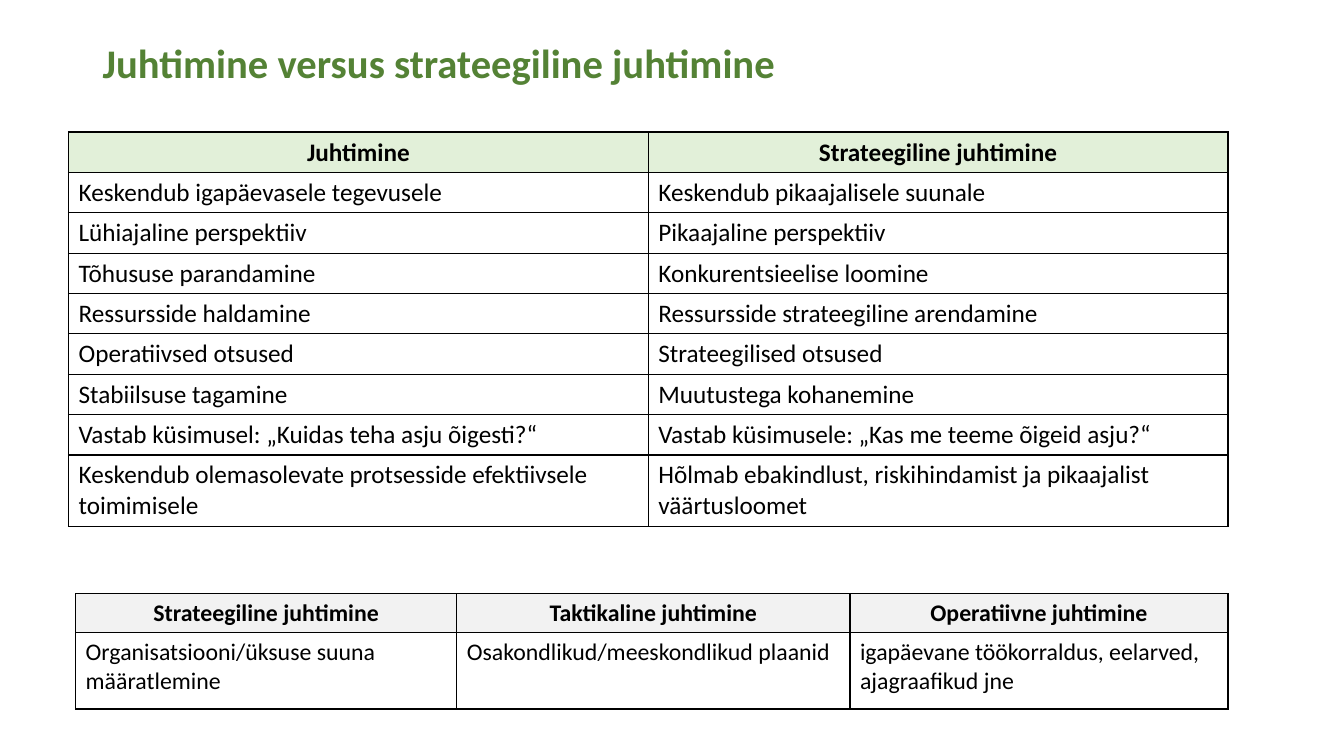
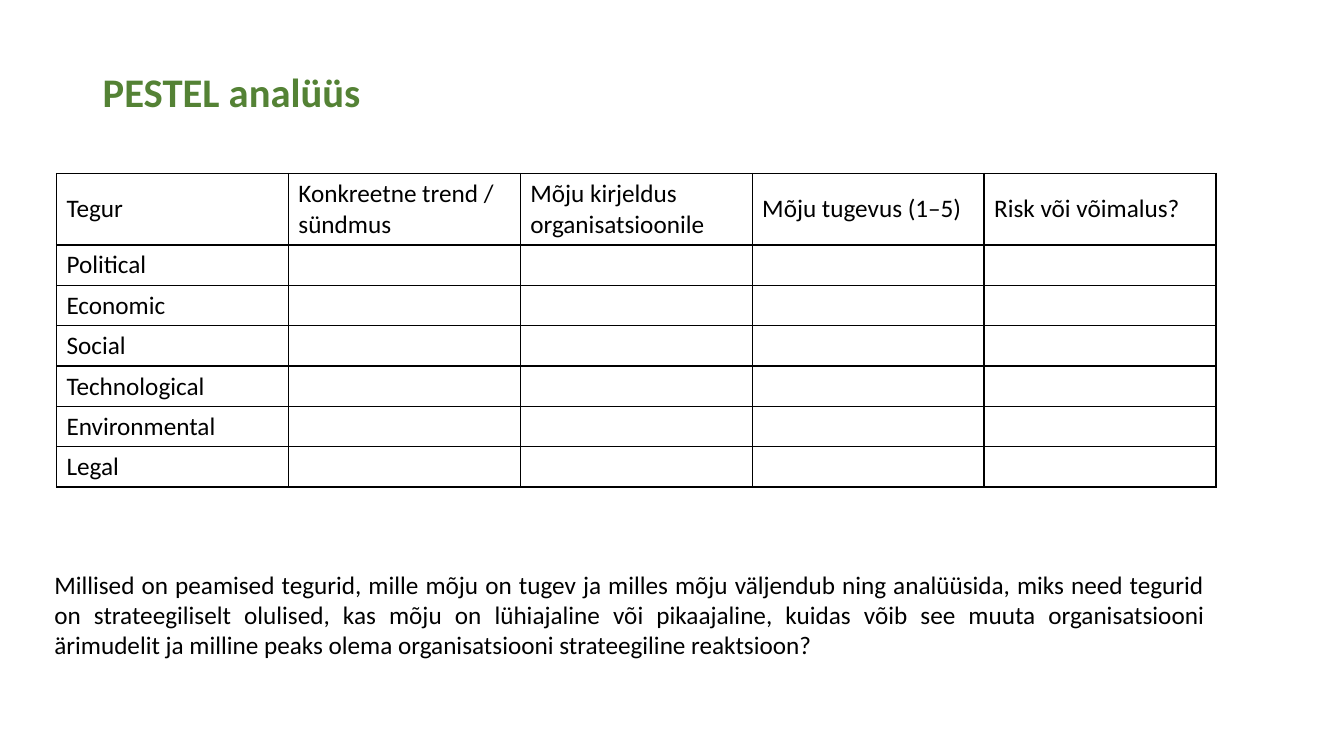
"""Build two slides on strategic management and PESTEL analysis."""
import pptx
import pptx.util
import pptx.dml.color
import pptx.enum.text
import pptx.oxml
import pptx.oxml.ns

Inches = pptx.util.Inches
RGBColor = pptx.dml.color.RGBColor
ALIGN = pptx.enum.text.PP_ALIGN
ANCHOR = pptx.enum.text.MSO_ANCHOR

GREEN = RGBColor(0x54, 0x82, 0x35)
MINT = RGBColor(0xE2, 0xF0, 0xD9)
GRAY = RGBColor(0xF2, 0xF2, 0xF2)
BLACK = RGBColor(0, 0, 0)
FONT = "Calibri"
TITLE = {"size": 29, "bold": True, "color": GREEN}
BODY = {"size": 18, "bold": False, "color": BLACK}
HEAD = {**BODY, "bold": True}
SMALL = {"size": 17}
LOW, TALL = 0.4, 0.71

SLIDES = [
    {
        "title": ("Juhtimine versus strateegiline juhtimine", 0.34, 0.62),
        "tables": [
            {
                "at": (0.68, 1.31),
                "cols": [5.75] * 2,
                "rows": [LOW] * 8 + [TALL],
                "fill": MINT,
                "cells": [
                    ("Juhtimine", "Strateegiline juhtimine"),
                    ("Keskendub igapäevasele tegevusele", "Keskendub pikaajalisele suunale"),
                    ("Lühiajaline perspektiiv", "Pikaajaline perspektiiv"),
                    ("Tõhususe parandamine", "Konkurentsieelise loomine"),
                    ("Ressursside haldamine", "Ressursside strateegiline arendamine"),
                    ("Operatiivsed otsused", "Strateegilised otsused"),
                    ("Stabiilsuse tagamine", "Muutustega kohanemine"),
                    ("Vastab küsimusel: „Kuidas teha asju õigesti?“",
                     "Vastab küsimusele: „Kas me teeme õigeid asju?“"),
                    ("Keskendub olemasolevate protsesside efektiivsele toimimisele",
                     "Hõlmab ebakindlust, riskihindamist ja pikaajalist väärtusloomet"),
                ],
            },
            {
                "at": (0.75, 5.89),
                "cols": [3.78, 3.9, 3.75],
                "rows": [0.38, 0.76],
                "fill": GRAY,
                "font": SMALL,
                "anchor": ANCHOR.TOP,
                "cells": [
                    ("Strateegiline juhtimine", "Taktikaline juhtimine", "Operatiivne juhtimine"),
                    ("Organisatsiooni/üksuse suuna määratlemine",
                     "Osakondlikud/meeskondlikud plaanid",
                     "igapäevane töökorraldus, eelarved, ajagraafikud jne"),
                ],
            },
        ],
    },
    {
        "title": ("PESTEL analüüs", 0.64, 0.59),
        "tables": [
            {
                "at": (0.56, 1.72),
                "cols": [2.3] * 5,
                "rows": [TALL] + [LOW] * 6,
                "cells": [
                    ("Tegur", "Konkreetne trend / sündmus", "Mõju kirjeldus organisatsioonile",
                     "Mõju tugevus (1–5)", "Risk või võimalus?"),
                    ("Political",), ("Economic",), ("Social",),
                    ("Technological",), ("Environmental",), ("Legal",),
                ],
            },
        ],
        "note": (
            "Millised on peamised tegurid, mille mõju on tugev ja milles mõju väljendub ning "
            "analüüsida, miks need tegurid on strateegiliselt olulised, kas mõju on lühiajaline "
            "või pikaajaline, kuidas võib see muuta organisatsiooni ärimudelit ja milline peaks "
            "olema organisatsiooni strateegiline reaktsioon?"
        ),
    },
]


def write(frame, text, style, align=ALIGN.LEFT, space=1.0):
    para = frame.paragraphs[0]
    para.alignment = align
    para.line_spacing = space
    run = para.add_run()
    run.text = text
    look = {"name": FONT, "size": pptx.util.Pt(style["size"]), "bold": style["bold"]}
    for key, value in look.items():
        setattr(run.font, key, value)
    run.font.color.rgb = style["color"]


def add_text(slide, text, box, style, **look):
    frame = slide.shapes.add_textbox(*map(Inches, box)).text_frame
    frame.word_wrap = True
    frame.vertical_anchor = ANCHOR.MIDDLE
    write(frame, text, style, **look)


def add_edges(cell):
    props = cell._tc.get_or_add_tcPr()
    space = pptx.oxml.ns.nsdecls("a")
    for side in "LRTB":
        props.append(pptx.oxml.parse_xml(
            f'<a:ln{side} {space} w="12700"><a:solidFill>'
            f'<a:srgbClr val="{BLACK}"/></a:solidFill></a:ln{side}>'))


def add_grid(slide, data):
    cols, rows = data["cols"], data["rows"]
    size = sum(cols), sum(rows)
    table = slide.shapes.add_table(
        len(rows), len(cols), *map(Inches, data["at"] + size)).table
    for name in ("first_row", "horz_banding"):
        setattr(table, name, False)
    for col, width in zip(table.columns, cols):
        col.width = Inches(width)
    fill = data.get("fill")
    for i, (row, height) in enumerate(zip(table.rows, rows)):
        row.height = Inches(height)
        head = i == 0 and fill is not None
        style = {**(HEAD if head else BODY), **data.get("font", {})}
        for cell in row.cells:
            cell.vertical_anchor = data.get("anchor", ANCHOR.MIDDLE)
            add_edges(cell)
            if head:
                cell.fill.solid()
                cell.fill.fore_color.rgb = fill
            else:
                cell.fill.background()
        for cell, text in zip(row.cells, data["cells"][i]):
            write(cell.text_frame, text, style, ALIGN.CENTER if head else ALIGN.LEFT)


def main():
    deck = pptx.Presentation()
    deck.slide_width, deck.slide_height = Inches(13.33), Inches(7.5)
    for page in SLIDES:
        slide = deck.slides.add_slide(deck.slide_layouts[6])
        text, top, height = page["title"]
        add_text(slide, text, (0.92, top, 11.5, height), TITLE, space=0.9)
        for data in page["tables"]:
            add_grid(slide, data)
        if "note" in page:
            add_text(slide, page["note"], (0.44, 5.59, 11.61, 1.01), BODY, align=ALIGN.JUSTIFY)
    deck.save("out.pptx")


if __name__ == "__main__":
    main()
